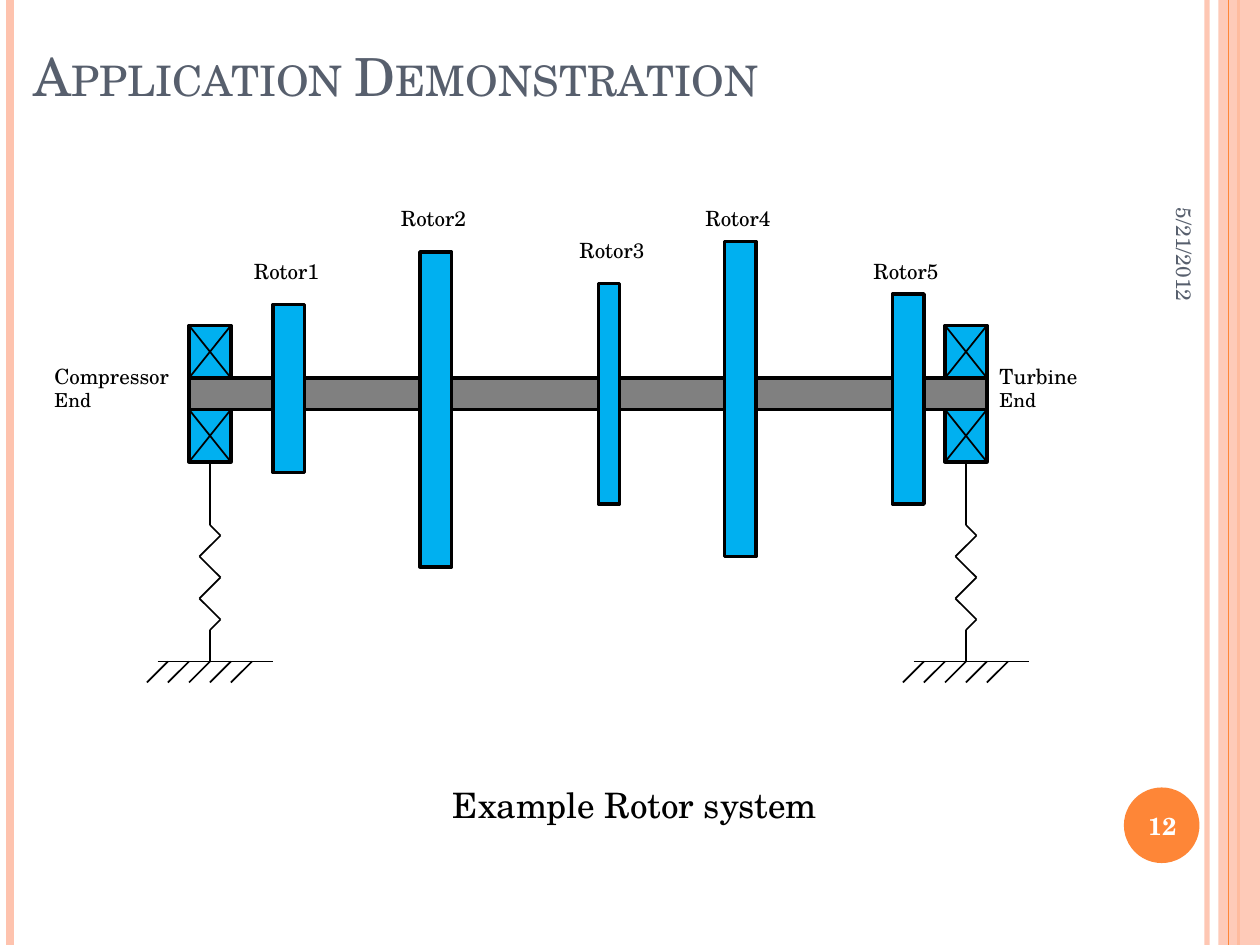
from lxml import etree
from pptx import Presentation
from pptx.dml.color import RGBColor
from pptx.enum.shapes import MSO_CONNECTOR, MSO_SHAPE
from pptx.enum.text import MSO_ANCHOR, PP_ALIGN
from pptx.oxml.ns import qn
from pptx.util import Inches, Pt

STRAIGHT = MSO_CONNECTOR.STRAIGHT
RECT, OVAL = MSO_SHAPE.RECTANGLE, MSO_SHAPE.OVAL
LEFT, CENTER, RIGHT = PP_ALIGN.LEFT, PP_ALIGN.CENTER, PP_ALIGN.RIGHT
TOP, MIDDLE = MSO_ANCHOR.TOP, MSO_ANCHOR.MIDDLE
BLACK = RGBColor(0x00, 0x00, 0x00)
WHITE = RGBColor(0xFF, 0xFF, 0xFF)
SLATE = RGBColor(0x57, 0x5F, 0x6D)
PEACH = RGBColor(0xFE, 0xC3, 0xAE)
ORANGE = RGBColor(0xFE, 0x86, 0x37)
GRAY = RGBColor(0x80, 0x80, 0x80)
BLUE = RGBColor(0x00, 0xB0, 0xF0)
FONT = "TeX Gyre Schola"

# Diagram positions are in grid units of 1/12 inch.
GRID = 12
SHAFT = (18, 36, 76, 3)
ROTORS = [
    ("Rotor1", (26, 29, 3, 16), 24),
    ("Rotor2", (40, 24, 3, 30), 19),
    ("Rotor3", (57, 27, 2, 21), 22),
    ("Rotor4", (69, 23, 3, 30), 19),
    ("Rotor5", (85, 28, 3, 20), 24),
]
END_LABELS = [("Compressor", 4, 1.13), ("Turbine", 94, 0.83)]
SUPPORT_CENTERS = [20, 92]
BEARING_TOPS = [31, 39]
SPRING = [(0, 44), (0, 50), (1, 51), (-1, 53), (1, 55), (-1, 57),
          (1, 59), (0, 60), (0, 63)]
GROUND_Y = 63
HATCHES = range(-4, 5, 2)

prs = Presentation()
prs.slide_width, prs.slide_height = Inches(10), Inches(7.5)
slide = prs.slides.add_slide(prs.slide_layouts[6])
shapes = slide.shapes


def set_alpha(element, percent):
    color = element.find(".//" + qn("a:srgbClr"))
    etree.SubElement(color, qn("a:alpha"), val=str(percent * 1000))


def add_line(x1, y1, x2, y2, color=BLACK, width=1):
    line = shapes.add_connector(STRAIGHT, Inches(x1), Inches(y1), Inches(x2), Inches(y2))
    line.line.color.rgb = color
    line.line.width = Pt(width)
    etree.SubElement(line._element.spPr, qn("a:effectLst"))
    return line


def add_shape(kind, x, y, w, h, fill, outline=None):
    sp = shapes.add_shape(kind, Inches(x), Inches(y), Inches(w), Inches(h))
    sp.shadow.inherit = False
    sp.fill.solid()
    sp.fill.fore_color.rgb = fill
    if outline is None:
        sp.line.fill.background()
    else:
        sp.line.color.rgb = outline
        sp.line.width = Pt(2)
    return sp


def add_text(lines, x, y, w, h, color=BLACK, align=LEFT, anchor=TOP, wrap=True):
    sp = shapes.add_textbox(Inches(x), Inches(y), Inches(w), Inches(h))
    tf = sp.text_frame
    tf.word_wrap = wrap
    tf.vertical_anchor = anchor
    tf.text = "\n".join(text for text, size in lines)
    for p, (text, size) in zip(tf.paragraphs, lines):
        p.alignment = align
        font = p.runs[0].font
        font.name, font.size, font.color.rgb = FONT, Pt(size), color
    return sp


def grid_line(*points):
    add_line(*(v / GRID for v in points))


def grid_rect(box, fill):
    add_shape(RECT, *(v / GRID for v in box), fill, BLACK)


def add_support(cx):
    for top in BEARING_TOPS:
        grid_rect((cx - 2, top, 4, 5), BLUE)
        grid_line(cx - 2, top, cx + 2, top + 5)
        grid_line(cx + 2, top, cx - 2, top + 5)
    for (dx1, y1), (dx2, y2) in zip(SPRING, SPRING[1:]):
        grid_line(cx + dx1, y1, cx + dx2, y2)
    grid_line(cx - 5, GROUND_Y, cx + 6, GROUND_Y)
    for dx in HATCHES:
        grid_line(cx + dx, GROUND_Y, cx + dx - 2, GROUND_Y + 2)


edge = add_line(9.58, 0, 9.58, 7.5, PEACH, 3)
set_alpha(edge.line._ln, 93)
add_line(0.08, 0, 0.08, 7.5, PEACH, 4.5)
add_line(9.83, 0, 9.83, 7.5, ORANGE, 1.5)
band = add_shape(RECT, 9.67, 0, 0.33, 7.5, PEACH)
set_alpha(band._element.spPr, 87)
add_line(9.75, 0, 9.75, 7.5, ORANGE, 0.75)
add_shape(OVAL, 8.92, 6.25, 0.6, 0.6, ORANGE)

date = add_text([("5/21/2012", 12)], 8.3, 1.18, 2.2, 0.42, SLATE, RIGHT, MIDDLE)
date.rotation = 90
number = add_text([("12", 14)], 8.89, 6.27, 0.67, 0.57, WHITE, CENTER, MIDDLE)
number.text_frame.paragraphs[0].runs[0].font.bold = True
add_text([("Example Rotor system", 20)], 1.33, 6.17, 7.42, 0.44, align=CENTER)

for name, x, width in END_LABELS:
    add_text([(name, 12), ("End", 11)], x / GRID, 34 / GRID, width, 0.49, wrap=False)
grid_rect(SHAFT, GRAY)
for name, box, label_y in ROTORS:
    add_text([(name, 12)], (box[0] - 3) / GRID, label_y / GRID, 0.72, 0.3, wrap=False)
    grid_rect(box, BLUE)
for cx in SUPPORT_CENTERS:
    add_support(cx)

title = add_text([("Application Demonstration", 30)], 0.17, 0.3, 8.17, 1.25, SLATE)
title.text_frame.paragraphs[0].runs[0].font._element.set("cap", "small")

prs.save("out.pptx")
